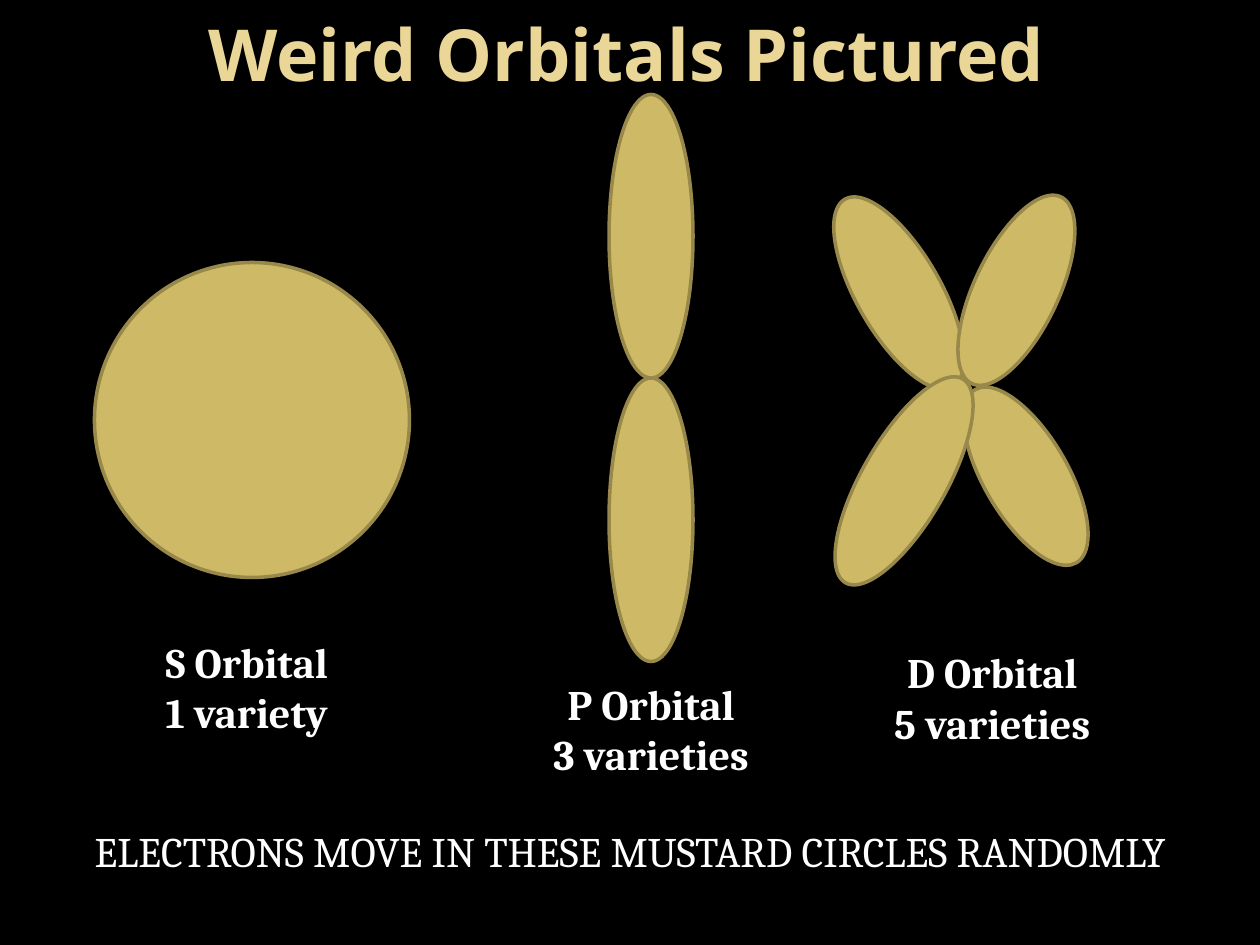
from dataclasses import dataclass

from pptx import Presentation
from pptx.dml.color import RGBColor
from pptx.enum.shapes import MSO_SHAPE
from pptx.enum.text import MSO_ANCHOR, PP_ALIGN
from pptx.slide import Slide
from pptx.util import Inches, Pt

COLUMNS, ROWS = 120, 90
WIDTH, HEIGHT = Inches(10), Inches(7.5)
COLORS = {
    "background": "000000",
    "title": "EAD696",
    "text": "FFFFFF",
    "mustard": "CEB966",
    "outline": "98894B",
}
LOBE_WIDTH = 8
LABEL_HEIGHT = 11


@dataclass(frozen=True)
class Box:
    """A place on the slide, in grid columns and rows."""
    column: float
    row: float
    columns: float
    rows: float

    def lengths(self) -> tuple[int, int, int, int]:
        return (
            round(WIDTH * self.column / COLUMNS),
            round(HEIGHT * self.row / ROWS),
            round(WIDTH * self.columns / COLUMNS),
            round(HEIGHT * self.rows / ROWS),
        )


@dataclass(frozen=True)
class Lobe:
    box: Box
    rotation: float = 0


@dataclass(frozen=True)
class Orbital:
    label: str
    label_box: Box
    lobes: tuple[Lobe, ...]


ORBITALS = (
    Orbital("S Orbital\n1 variety", Box(11, 60, 25, LABEL_HEIGHT),
            (Lobe(Box(9, 25, 30, 30)),)),
    Orbital("P Orbital\n3 varieties", Box(49, 64, 26, LABEL_HEIGHT),
            tuple(Lobe(Box(58, row, LOBE_WIDTH, 27)) for row in (36, 9))),
    Orbital("D Orbital\n5 varieties", Box(82, 61, 25, LABEL_HEIGHT), (
        Lobe(Box(93.7, 35.8, LOBE_WIDTH, 19.1), 329.7),
        Lobe(Box(81.6, 17.6, LOBE_WIDTH, 20.6), 330.1),
        Lobe(Box(82.1, 34.6, LOBE_WIDTH, 22.4), 29.9),
        Lobe(Box(92.8, 17.8, LOBE_WIDTH, 19.7), 25.5),
    )),
)


def color(name: str) -> RGBColor:
    return RGBColor.from_string(COLORS[name])


def add_text(slide: Slide, text: str, box: Box, *, size: float = 24,
             font: str = "Cambria", fill: str = "text", bold: bool = False,
             anchor: MSO_ANCHOR = MSO_ANCHOR.TOP) -> None:
    """Add centred text, with one paragraph for each line."""
    frame = slide.shapes.add_textbox(*box.lengths()).text_frame
    frame.word_wrap = True
    frame.vertical_anchor = anchor
    frame.text = text
    for paragraph in frame.paragraphs:
        paragraph.alignment = PP_ALIGN.CENTER
        for run in paragraph.runs:
            run.font.name = font
            run.font.size = Pt(size)
            run.font.bold = bold
            run.font.color.rgb = color(fill)


def add_lobe(slide: Slide, lobe: Lobe) -> None:
    shape = slide.shapes.add_shape(MSO_SHAPE.OVAL, *lobe.box.lengths())
    shape.rotation = lobe.rotation
    shape.shadow.inherit = False
    shape.fill.solid()
    shape.fill.fore_color.rgb = color("mustard")
    shape.line.color.rgb = color("outline")
    shape.line.width = Pt(2)


def main() -> None:
    presentation = Presentation()
    presentation.slide_width, presentation.slide_height = WIDTH, HEIGHT
    slide = presentation.slides.add_slide(presentation.slide_layouts[6])
    slide.background.fill.solid()
    slide.background.fill.fore_color.rgb = color("background")

    add_text(slide, "Weird Orbitals Pictured", Box(6, 0, 107.4, 10), size=41,
             font="Noto Sans", fill="title", bold=True,
             anchor=MSO_ANCHOR.MIDDLE)
    for orbital in ORBITALS:
        for lobe in orbital.lobes:
            add_lobe(slide, lobe)
        add_text(slide, orbital.label, orbital.label_box, bold=True)
    add_text(slide, "ELECTRONS MOVE IN THESE MUSTARD CIRCLES RANDOMLY",
             Box(6, 78, 108, LABEL_HEIGHT))

    presentation.save("out.pptx")


if __name__ == "__main__":
    main()
